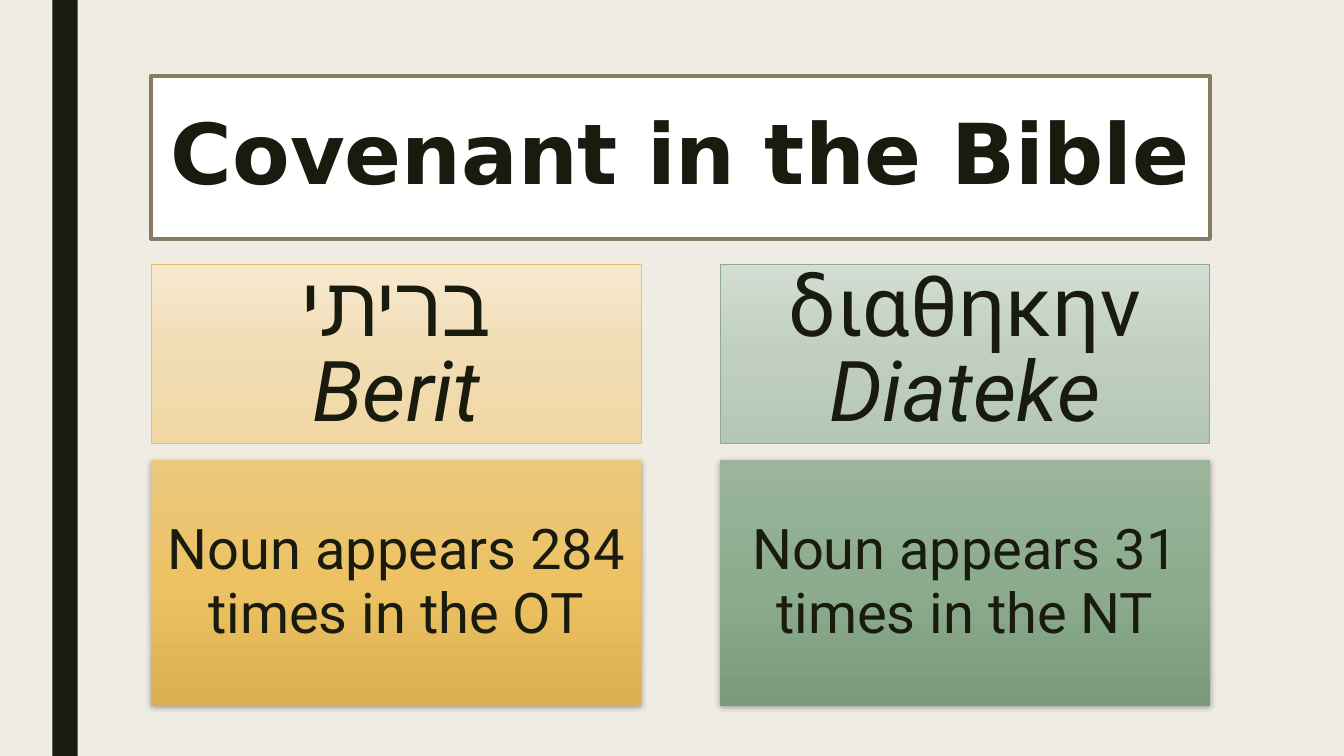
from copy import deepcopy
from dataclasses import dataclass

from lxml.etree import SubElement
from pptx import Presentation
from pptx.dml.color import RGBColor
from pptx.enum.shapes import MSO_SHAPE as Preset
from pptx.enum.text import MSO_ANCHOR as Anchor, MSO_AUTO_SIZE as AutoSize, PP_ALIGN as Align
from pptx.oxml.ns import qn
from pptx.util import Inches, Pt

COLORS = {
    "background": "EFEDE3",
    "ink": "191B0E",
    "white": "FFFFFF",
    "title_line": "897B61",
    "gold_line": "E6C069",
    "green_line": "8DAB8E",
}
GRADIENTS = {
    "gold_light": ("F7E9D0", "F1DCB4", "F1D7A3"),
    "gold": ("EAC87E", "ECC263", "D9B051"),
    "green_light": ("D3DDD3", "C0CFC0", "B4C7B5"),
    "green": ("9BB59B", "8CAC8D", "7A9B7B"),
}
LEFT, COLUMN_WIDTH, COLUMN_STEP = 1.5, 4.86, 5.64


@dataclass
class Column:
    word: str
    reading: str
    count: str
    hue: str


COLUMNS = [
    Column("בריתי", "Berit", "Noun appears 284 times in the OT", "gold"),
    Column("διαθηκην", "Diateke", "Noun appears 31 times in the NT", "green"),
]


def color(name: str) -> RGBColor:
    return RGBColor.from_string(COLORS[name])


def add_box(page, left: float, top: float, width: float, height: float):
    box = page.shapes.add_shape(
        Preset.RECTANGLE, Inches(left), Inches(top), Inches(width), Inches(height)
    )
    box.shadow.inherit = False
    box.line.fill.background()
    return box


def paint(box, fill: str) -> None:
    box.fill.solid()
    box.fill.fore_color.rgb = color(fill)


def outline(box, name: str, width: float) -> None:
    box.line.color.rgb = color(name)
    box.line.width = Pt(width)


def shade(box, name: str) -> None:
    box.fill.gradient()
    box.fill.gradient_angle = 270
    stops = box.fill._fill._gradFill.find(qn("a:gsLst"))
    stops.insert(1, deepcopy(stops[0]))
    for index, (stop, value) in enumerate(zip(box.fill.gradient_stops, GRADIENTS[name])):
        stop.position = index / 2
        stop.color.rgb = RGBColor.from_string(value)


def cast_shadow(box) -> None:
    effects = box._element.spPr.find(qn("a:effectLst"))
    shadow = SubElement(
        effects, qn("a:outerShdw"), blurRad=str(Pt(4.5)), dist=str(Pt(1.5)),
        dir="5400000", algn="ctr", rotWithShape="0",
    )
    black = SubElement(shadow, qn("a:srgbClr"), val="000000")
    SubElement(black, qn("a:alpha"), val="35000")


def write(para, text: str, *, size: float, spacing: float, font: str = "Roboto",
          bold: bool = False, italic: bool = False, before: float = 0, after: float = 0) -> None:
    para.alignment = Align.CENTER
    para.line_spacing = spacing
    para.space_before, para.space_after = Pt(before), Pt(after)
    span = para.add_run()
    span.text = text
    span.font.name, span.font.size = font, Pt(size)
    span.font.bold, span.font.italic = bold, italic
    span.font.color.rgb = color("ink")


def prepare_text(box, anchor: Anchor):
    frame = box.text_frame
    frame.word_wrap = True
    frame.auto_size = AutoSize.NONE
    frame.vertical_anchor = anchor
    return frame


def add_title(page, text: str) -> None:
    title = page.shapes.title
    title.left, title.top = Inches(LEFT), Inches(0.75)
    title.width, title.height = Inches(10.5), Inches(1.62)
    paint(title, "white")
    outline(title, "title_line", 2.75)
    frame = prepare_text(title, Anchor.MIDDLE)
    write(frame.paragraphs[0], text, size=60, spacing=0.89, font="DejaVu Sans", bold=True)


def add_column(page, column: Column, left: float) -> None:
    heading = add_box(page, left, 2.62, COLUMN_WIDTH, 1.78)
    shade(heading, f"{column.hue}_light")
    outline(heading, f"{column.hue}_line", 0.5)
    frame = prepare_text(heading, Anchor.BOTTOM)
    write(frame.paragraphs[0], column.word, size=60, spacing=0.84)
    write(frame.add_paragraph(), column.reading, size=60, spacing=0.84, italic=True)

    detail = add_box(page, left, 4.56, COLUMN_WIDTH, 2.44)
    shade(detail, column.hue)
    cast_shadow(detail)
    frame = prepare_text(detail, Anchor.MIDDLE)
    write(frame.paragraphs[0], column.count, size=40, spacing=0.94, before=10, after=2)


def main() -> None:
    deck = Presentation()
    deck.slide_width, deck.slide_height = Inches(13.33), Inches(7.5)
    page = deck.slides.add_slide(deck.slide_layouts[5])
    page.background.fill.solid()
    page.background.fill.fore_color.rgb = color("background")
    paint(add_box(page, 0.52, 0, 0.25, 7.5), "ink")
    add_title(page, "Covenant in the Bible")
    for index, column in enumerate(COLUMNS):
        add_column(page, column, LEFT + index * COLUMN_STEP)
    deck.save("out.pptx")


if __name__ == "__main__":
    main()
